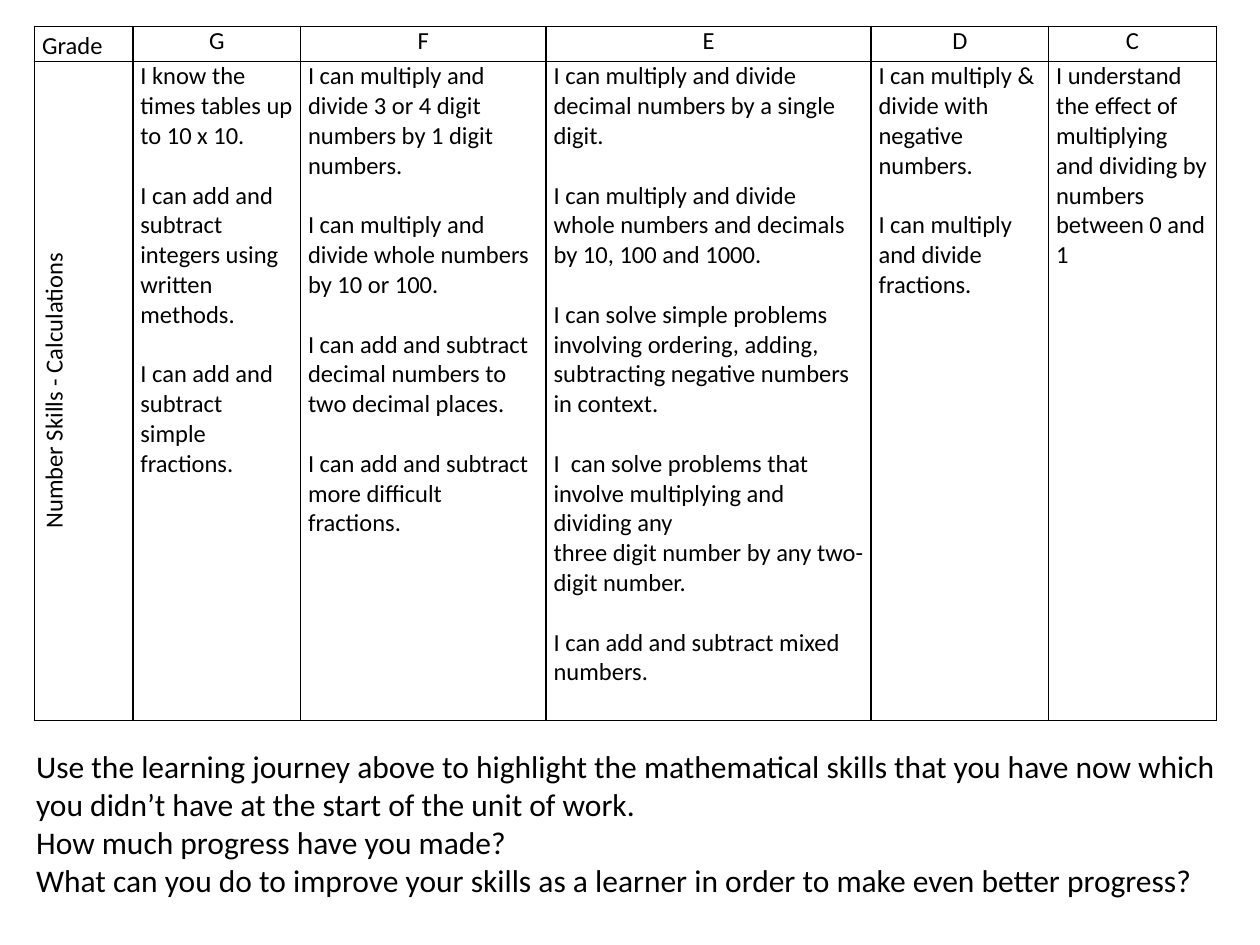
from lxml.etree import SubElement
from pptx import Presentation
from pptx.dml.color import RGBColor
from pptx.enum.text import PP_ALIGN
from pptx.oxml import parse_xml
from pptx.oxml.ns import nsdecls, qn
from pptx.util import Cm, Pt

BLACK = RGBColor(0x00, 0x00, 0x00)
TABLE_FONT = {"name": "Calibri", "size": Pt(14), "bold": False}
PROMPT_FONT = {"name": "Calibri", "size": Pt(18)}
CELL_MARGINS = {"margin_left": Cm(0.15), "margin_right": Cm(0.15), "margin_top": 0, "margin_bottom": 0}
PLAIN = {}
CENTRED = {"alignment": PP_ALIGN.CENTER}
LOOSE = {"line_spacing": 1.15}
GAP_ABOVE = {"space_before": Pt(17)}

COLUMN_WIDTHS = [1.98, 3.38, 4.95, 6.55, 3.58, 3.38]
ROW_HEIGHTS = [0.71, 13.28]
GRADES = ["G", "F", "E", "D", "C"]
TOPIC = "Number Skills - Calculations"
SKILLS = [
    [
        "I know the times tables up to 10 x 10.",
        "I can add and subtract integers using written methods.",
        "I can add and subtract simple fractions.",
    ],
    [
        "I can multiply and divide 3 or 4 digit numbers by 1 digit numbers.",
        "I can multiply and divide whole numbers by 10 or 100.",
        "I can add and subtract decimal numbers to two decimal places.",
        "I can add and subtract more difficult fractions.",
    ],
    [
        "I can multiply and divide decimal numbers by a single digit.",
        "I can multiply and divide  whole numbers and decimals by 10, 100 and 1000.",
        "I can solve simple problems involving ordering, adding, subtracting negative numbers in context.",
        "I  can solve problems that involve multiplying and dividing any",
        "three digit number by any two-digit number.",
        "I can add and subtract mixed numbers.",
    ],
    [
        "I can multiply & divide with negative numbers.",
        "I can multiply and divide fractions.",
    ],
    ["I understand the effect of multiplying and dividing by numbers between 0 and 1"],
]
PROMPTS = [
    "Use the learning journey above to highlight the mathematical skills that you have now "
    "which you didn’t have at the start of the unit of work.",
    "How much progress have you made?",
    "What can you do to improve your skills as a learner in order to make even better progress?",
]


def apply_format(target, values):
    """Set every attribute named in values on the target."""
    for name, value in values.items():
        setattr(target, name, value)


def write_paragraphs(text_frame, entries, font_values):
    """Write (text, paragraph format) entries into a text frame."""
    for index, (text, paragraph_values) in enumerate(entries):
        paragraph = text_frame.add_paragraph() if index else text_frame.paragraphs[0]
        apply_format(paragraph, paragraph_values)
        run = paragraph.add_run()
        run.text = text
        apply_format(run.font, font_values)
        run.font.color.rgb = BLACK


def add_borders(cell):
    """Draw a thin black line on all four sides of a cell."""
    properties = cell._tc.get_or_add_tcPr()
    for index, side in enumerate(("lnL", "lnR", "lnT", "lnB")):
        line = parse_xml(f'<a:{side} {nsdecls("a")} w="{Pt(1)}"/>')
        fill = SubElement(line, qn("a:solidFill"))
        SubElement(fill, qn("a:srgbClr"), val=str(BLACK))
        properties.insert(index, line)


def fill_cell(cell, entries):
    """Format a table cell and write its paragraphs."""
    apply_format(cell, CELL_MARGINS)
    cell.fill.background()
    add_borders(cell)
    write_paragraphs(cell.text_frame, entries, TABLE_FONT)


def skill_entries(skills):
    """Put a gap above each new skill but not above a continued sentence."""
    return [
        (skill, GAP_ABOVE if index and skill.startswith("I ") else PLAIN)
        for index, skill in enumerate(skills)
    ]


def add_skills_table(slide):
    """Add the table of skills by grade."""
    frame = slide.shapes.add_table(
        len(ROW_HEIGHTS), len(COLUMN_WIDTHS), Cm(0.7), Cm(0.53),
        Cm(sum(COLUMN_WIDTHS)), Cm(sum(ROW_HEIGHTS)),
    )
    table = frame.table
    apply_format(table, {"first_row": False, "horz_banding": False})
    for column, width in zip(table.columns, COLUMN_WIDTHS):
        column.width = Cm(width)
    for row, height in zip(table.rows, ROW_HEIGHTS):
        row.height = Cm(height)

    fill_cell(table.cell(0, 0), [("Grade", LOOSE)])
    topic_cell = table.cell(1, 0)
    fill_cell(topic_cell, [(TOPIC, CENTRED | LOOSE)])
    topic_cell._tc.get_or_add_tcPr().set("vert", "vert270")
    for column, (grade, skills) in enumerate(zip(GRADES, SKILLS), start=1):
        fill_cell(table.cell(0, column), [(grade, CENTRED)])
        fill_cell(table.cell(1, column), skill_entries(skills))


def add_prompts(slide):
    """Add the reflection prompts below the table."""
    text_box = slide.shapes.add_textbox(Cm(0.48), Cm(14.94), Cm(24.79), Cm(4.11))
    text_box.text_frame.word_wrap = True
    write_paragraphs(text_box.text_frame, [(prompt, PLAIN) for prompt in PROMPTS], PROMPT_FONT)


def main():
    """Build the slide and save the presentation."""
    presentation = Presentation()
    apply_format(presentation, {"slide_width": Cm(25.4), "slide_height": Cm(19.05)})
    slide = presentation.slides.add_slide(presentation.slide_layouts[6])
    add_prompts(slide)
    add_skills_table(slide)
    presentation.save("out.pptx")


if __name__ == "__main__":
    main()
